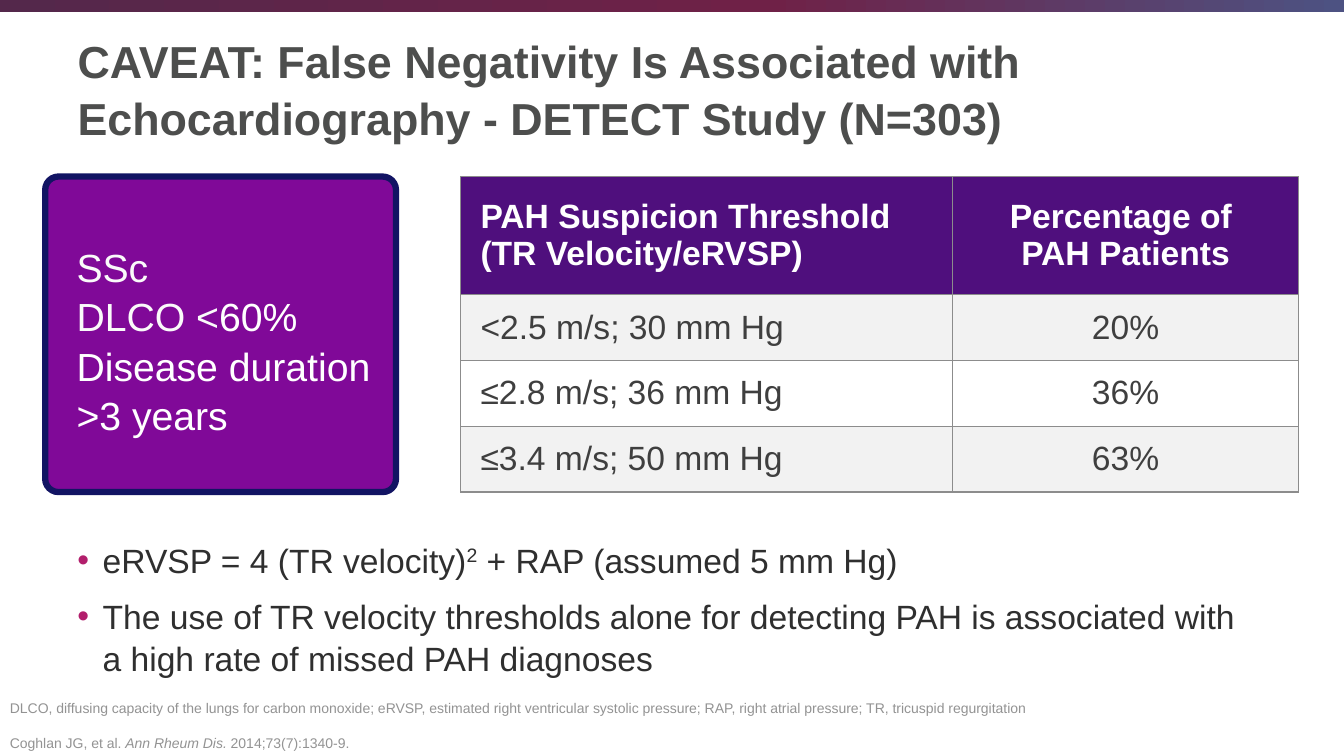
from copy import deepcopy

from pptx import Presentation
from pptx.dml.color import RGBColor
from pptx.enum.shapes import MSO_SHAPE
from pptx.enum.text import MSO_ANCHOR, MSO_AUTO_SIZE, PP_ALIGN
from pptx.oxml import parse_xml
from pptx.oxml.ns import nsdecls
from pptx.util import Cm, Pt

LEFT, CENTER = PP_ALIGN.LEFT, PP_ALIGN.CENTER
MIDDLE, TOP, BOTTOM = MSO_ANCHOR.MIDDLE, MSO_ANCHOR.TOP, MSO_ANCHOR.BOTTOM

COLORS = {
    "title": "4D4E4D", "body": "2F2F2F", "bullet": "B21E6C", "note": "939393",
    "panel": "800998", "panel_line": "121463", "panel_text": "FAFAFA",
    "header": "4F0F7D", "white": "FFFFFF", "cell_text": "3F3F3F",
    "band": "F2F2F2", "border": "8C8C8C",
}
BAR_STOPS = [(0, "54284B"), (0.57, "6F2147"), (1, "4D5282")]

TITLE = [[("CAVEAT: False Negativity Is Associated with Echocardiography"
           " - DETECT Study (N=303)", {})]]
CRITERIA = [
    [("SSc", {})],
    [("DLCO <", {}), ("60%", {"color": "white"})],
    [("Disease duration >3 years", {"color": "white"})],
]
THRESHOLDS = [
    ("PAH Suspicion Threshold\n(TR Velocity/eRVSP)", "Percentage of \vPAH Patients"),
    ("<2.5 m/s; 30 mm Hg", "20%"),
    ("≤2.8 m/s; 36 mm Hg", "36%"),
    ("≤3.4 m/s; 50 mm Hg", "63%"),
]
BULLETS = [
    [("eRVSP = 4 (TR velocity)", {}), ("2", {"superscript": True}),
     (" + RAP (assumed 5 mm Hg)", {})],
    [("The use of TR velocity thresholds alone for detecting PAH is associated"
      " with a high rate of missed PAH diagnoses", {})],
]
NOTES = [
    [("DLCO, diffusing capacity of the lungs for carbon monoxide; eRVSP, estimated"
      " right ventricular systolic pressure; RAP, right atrial pressure;"
      " TR, tricuspid regurgitation", {})],
    [("Coghlan JG, et al. ", {}), ("Ann Rheum Dis. ", {"italic": True}),
     ("2014;73(7):1340-9.", {})],
]

SLIDE_SIZE = (33.87, 19.05)
BAR_HEIGHT = 0.3
TITLE_BOX = (1.7, 0.56, 29.85, 3.3)
BODY_BOX = (1.7, 4.11, 29.85, 13.11)
PANEL_BOX = (1.14, 4.45, 8.84, 7.95)
CRITERIA_BOX = (1.68, 5.94, 8.31, 5.05)
NOTES_BOX = (0, 17.83, 29.85, 1.22)
TABLE_ORIGIN = (11.61, 4.45)
COLUMN_WIDTHS = (12.4, 8.71)
ROW_HEIGHTS = (2.97, 1.66, 1.66, 1.66)
COLUMN_ALIGNMENTS = (LEFT, CENTER)
CELL_FORMAT = {"vertical_anchor": MIDDLE, "margin_left": Cm(0.5), "margin_right": Cm(0.5),
               "margin_top": Cm(0.13), "margin_bottom": Cm(0.13)}


def rgb(name):
    return RGBColor.from_string(COLORS[name])


def set_attributes(target, values):
    for name, value in values.items():
        setattr(target, name, value)


def place(shape, box):
    set_attributes(shape, dict(zip(("left", "top", "width", "height"), map(Cm, box))))


def format_font(font, color, **values):
    set_attributes(font, {"name": "Arial", **values})
    font.color.rgb = rgb(color)


def write_text(shape, content, anchor, size, color, bold=False):
    frame = shape.text_frame
    set_attributes(frame, {"word_wrap": True, "auto_size": MSO_AUTO_SIZE.NONE,
                           "vertical_anchor": anchor})
    for index, runs in enumerate(content):
        paragraph = frame.add_paragraph() if index else frame.paragraphs[0]
        set_attributes(paragraph, {"alignment": LEFT, "line_spacing": 1.05})
        for text, changes in runs:
            run = paragraph.add_run()
            run.text = text
            format_font(run.font, changes.get("color", color), size=Pt(size),
                        bold=bold, italic=changes.get("italic", False))
            if changes.get("superscript"):
                run._r.get_or_add_rPr().set("baseline", "30000")
    return frame.paragraphs


def add_bullet(paragraph):
    paragraph.space_before = Pt(10)
    properties = paragraph._p.get_or_add_pPr()
    properties.set("marL", str(Cm(0.64)))
    properties.set("indent", str(-Cm(0.64)))
    for xml in (f'<a:buClr {nsdecls("a")}><a:srgbClr val="{COLORS["bullet"]}"/></a:buClr>',
                f'<a:buFont {nsdecls("a")} typeface="Arial"/>',
                f'<a:buChar {nsdecls("a")} char="•"/>'):
        properties.append(parse_xml(xml))


def add_bar(slide):
    bar = slide.shapes.add_shape(MSO_SHAPE.RECTANGLE, 0, 0, Cm(SLIDE_SIZE[0]), Cm(BAR_HEIGHT))
    bar.shadow.inherit = False
    bar.line.fill.background()
    bar.fill.gradient()
    bar.fill.gradient_angle = 0
    stop_list = bar._element.spPr.gradFill.gsLst
    stop_list.insert(1, deepcopy(stop_list[0]))
    for stop, (position, color) in zip(bar.fill.gradient_stops, BAR_STOPS):
        stop.position = position
        stop.color.rgb = RGBColor.from_string(color)


def add_text(shapes, box, *text_format):
    return write_text(shapes.add_textbox(*map(Cm, box)), *text_format)


def add_panel(slide):
    group = slide.shapes.add_group_shape()
    panel = group.shapes.add_shape(MSO_SHAPE.ROUNDED_RECTANGLE, *map(Cm, PANEL_BOX))
    panel.adjustments[0] = 0.042
    panel.shadow.inherit = False
    panel.fill.solid()
    panel.fill.fore_color.rgb = rgb("panel")
    panel.line.color.rgb = rgb("panel_line")
    panel.line.width = Pt(4.5)
    add_text(group.shapes, CRITERIA_BOX, CRITERIA, TOP, 28, "panel_text")


def add_borders(cell):
    properties = cell._tc.get_or_add_tcPr()
    for side in ("lnL", "lnR", "lnT", "lnB"):
        properties.append(parse_xml(
            f'<a:{side} {nsdecls("a")} w="{Pt(1)}"><a:solidFill>'
            f'<a:srgbClr val="{COLORS["border"]}"/></a:solidFill></a:{side}>'))


def add_thresholds(slide):
    size = (sum(COLUMN_WIDTHS), sum(ROW_HEIGHTS))
    table = slide.shapes.add_table(len(THRESHOLDS), len(COLUMN_WIDTHS),
                                   *map(Cm, TABLE_ORIGIN + size)).table
    for column, width in zip(table.columns, COLUMN_WIDTHS):
        column.width = Cm(width)
    for row_index, (row, height) in enumerate(zip(table.rows, ROW_HEIGHTS)):
        row.height = Cm(height)
        is_header = row_index == 0
        for cell, text, alignment in zip(row.cells, THRESHOLDS[row_index], COLUMN_ALIGNMENTS):
            set_attributes(cell, CELL_FORMAT)
            add_borders(cell)
            if is_header or row_index % 2:
                cell.fill.solid()
                cell.fill.fore_color.rgb = rgb("header" if is_header else "band")
            else:
                cell.fill.background()
            cell.text = text
            for paragraph in cell.text_frame.paragraphs:
                paragraph.alignment = alignment
                for run in paragraph.runs:
                    format_font(run.font, "white" if is_header else "cell_text",
                                size=Pt(24), bold=is_header)


def main():
    presentation = Presentation()
    presentation.slide_width, presentation.slide_height = map(Cm, SLIDE_SIZE)
    slide = presentation.slides.add_slide(presentation.slide_layouts[5])
    add_bar(slide)
    place(slide.shapes.title, TITLE_BOX)
    write_text(slide.shapes.title, TITLE, MIDDLE, 32, "title", True)
    for paragraph in add_text(slide.shapes, BODY_BOX, BULLETS, BOTTOM, 24, "body"):
        add_bullet(paragraph)
    add_thresholds(slide)
    add_panel(slide)
    notes = add_text(slide.shapes, NOTES_BOX, NOTES, BOTTOM, 10, "note")
    notes[1].space_before = Pt(12)
    presentation.save("out.pptx")


if __name__ == "__main__":
    main()
